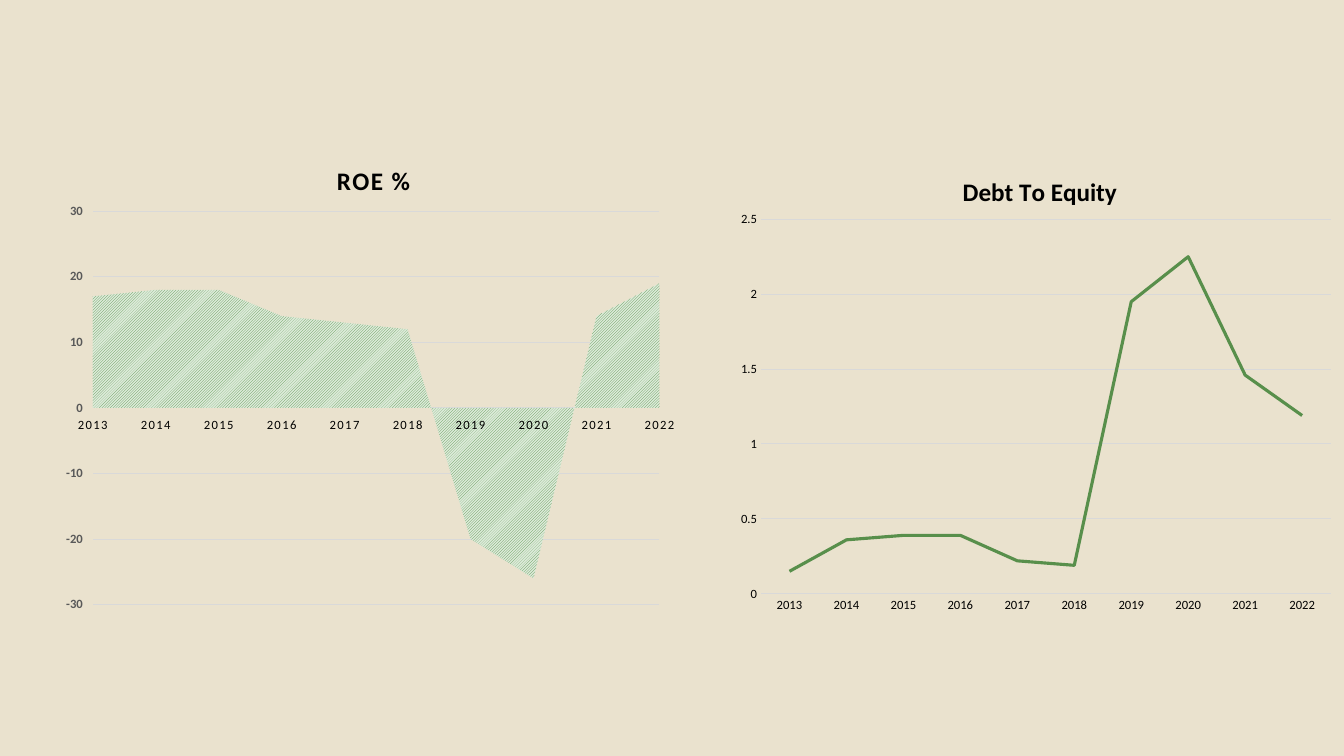
import pptx
import pptx.chart.data
import pptx.dml.color
import pptx.enum.chart
import pptx.enum.dml
import pptx.oxml
import pptx.oxml.ns
import pptx.util

Pt = pptx.util.Pt
XL = pptx.enum.chart.XL_CHART_TYPE
TICK = pptx.enum.chart.XL_TICK_MARK
qn = pptx.oxml.ns.qn
NS = pptx.oxml.ns.nsdecls("c")

# Content: boxes in points, title and plot layouts as fractions of the chart
YEARS = [str(year) for year in range(2013, 2023)]
CHARTS = [
    dict(title="ROE %", kind=XL.AREA_STACKED, box=(38.16, 95.76, 452.88, 348.48),
         values=[17, 18, 18, 14, 13, 12, -20, -26, 14, 19],
         scale=(-30, 30, 10), title_at=(0.44, 0.05), plot=(0.062, 0.158, 0.894, 0.807),
         tick=TICK.OUTSIDE, spacing=100, value_color="gray", value_bold=True),
    dict(title="Debt To Equity", kind=XL.LINE, box=(519.84, 105.84, 439.92, 339.12),
         values=[0.15, 0.36, 0.39, 0.39, 0.22, 0.19, 1.95, 2.25, 1.46, 1.19],
         scale=(0, 2.5, 0.5), title_at=(0.374, 0.045), plot=(0.054, 0.15, 0.925, 0.789),
         tick=TICK.NONE, spacing=0, value_color="black", value_bold=False),
]
COLORS = {"back": "EAE2CE", "black": "000000", "gray": "595959",
          "grid": "D9D9D9", "green": "588F4B", "pale": "DCEBD9"}
FONT = "Calibri"


def rgb(name):
    return pptx.dml.color.RGBColor.from_string(COLORS[name])


def style_font(font, size, color="black", bold=False):
    font.name, font.size, font.bold = FONT, Pt(size), bold
    font.color.rgb = rgb(color)


def style_line(line, color, width):
    line.color.rgb = rgb(color)
    line.width = Pt(width)


def place(parent, index, fractions, inner=False):
    """Give a chart part a manual layout."""
    for old in parent.findall(qn("c:layout")):
        parent.remove(old)
    tags = '<c:layoutTarget val="inner"/>' if inner else ""
    tags += '<c:xMode val="edge"/><c:yMode val="edge"/>'
    for tag, value in zip("xywh", fractions):
        tags += f'<c:{tag} val="{value}"/>'
    parent.insert(index, pptx.oxml.parse_xml(
        f'<c:layout {NS}><c:manualLayout>{tags}</c:manualLayout></c:layout>'))


def set_crossing(axis, mode):
    """Start the plot on a category or between two; needs a major unit."""
    element = axis._element
    for old in element.findall(qn("c:crossBetween")):
        element.remove(old)
    element.find(qn("c:majorUnit")).addprevious(
        pptx.oxml.parse_xml(f'<c:crossBetween {NS} val="{mode}"/>'))


def add_chart(slide, item):
    data = pptx.chart.data.CategoryChartData()
    data.categories = YEARS
    data.add_series("Series 1", item["values"])
    box = [Pt(v) for v in item["box"]]
    chart = slide.shapes.add_chart(item["kind"], *box, data).chart
    chart.has_legend = False
    style_font(chart.font, 10)
    is_line = item["kind"] == XL.LINE

    # Title
    chart.has_title = True
    title = chart.chart_title
    title.text_frame.text = item["title"]
    r = title.text_frame.paragraphs[0].runs[0]
    style_font(r.font, 18, bold=True)
    r._r.get_or_add_rPr().set("spc", str(item["spacing"]))
    place(title._element, 1, item["title_at"])

    # Axes
    cat, val = chart.category_axis, chart.value_axis
    for axis in (cat, val):
        axis.major_tick_mark = item["tick"]
        axis.minor_tick_mark = TICK.NONE
        axis.format.line.fill.background()
    cat.has_major_gridlines = False
    style_font(cat.tick_labels.font, 9)
    cat._element.find(".//" + qn("a:defRPr")).set("spc", str(item["spacing"]))
    style_font(val.tick_labels.font, 9, item["value_color"], item["value_bold"])
    val.tick_labels.number_format = "General"
    val.tick_labels.number_format_is_linked = False
    val.minimum_scale, val.maximum_scale, val.major_unit = item["scale"]
    val.has_major_gridlines = True
    style_line(val.major_gridlines.format.line, "grid", 0.75)
    if is_line:
        style_line(cat.format.line, "grid", 0.75)
    set_crossing(val, "between" if is_line else "midCat")

    # Plot and series
    place(chart._chartSpace.chart.plotArea, 0, item["plot"], inner=True)
    plot = chart.plots[0]
    plot.vary_by_categories = False
    series = plot.series[0]
    if is_line:
        series.smooth = False
        series.marker.style = pptx.enum.chart.XL_MARKER_STYLE.NONE
        style_line(series.format.line, "green", 2.25)
    else:
        fill = series.format.fill
        fill.patterned()
        fill.pattern = pptx.enum.dml.MSO_PATTERN.LIGHT_UPWARD_DIAGONAL
        fill.fore_color.rgb = rgb("green")
        fill.back_color.rgb = rgb("pale")
        series.format.line.fill.background()


def main():
    prs = pptx.Presentation()
    prs.slide_width, prs.slide_height = Pt(960), Pt(540)
    s = prs.slides.add_slide(prs.slide_layouts[6])
    s.background.fill.solid()
    s.background.fill.fore_color.rgb = rgb("back")
    for item in CHARTS:
        add_chart(s, item)
    prs.save("out.pptx")


if __name__ == "__main__":
    main()
